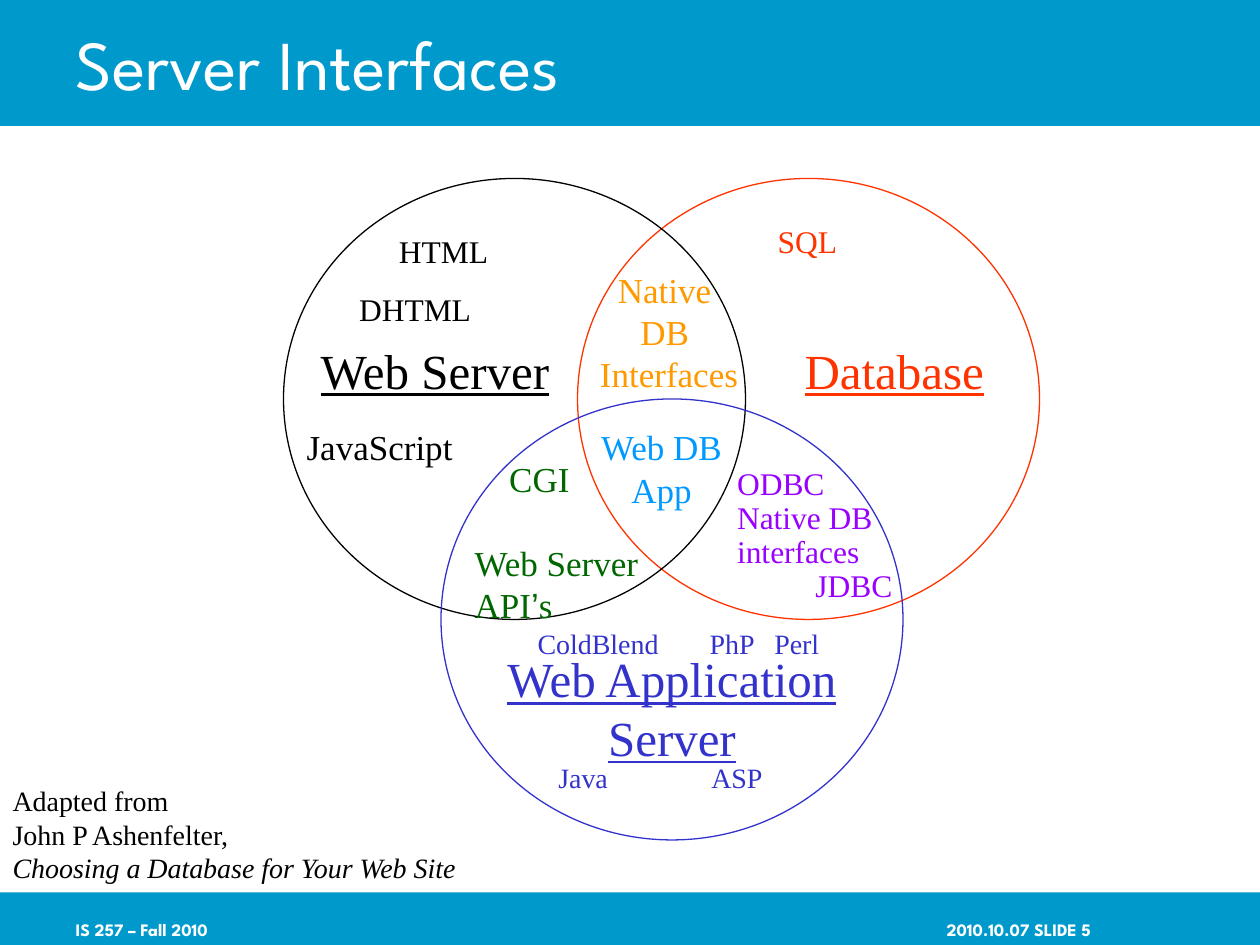
"""Build the Server Interfaces slide: three overlapping circles of web technologies."""
from pptx import Presentation
from pptx.dml.color import RGBColor
from pptx.enum import shapes, text
from pptx.util import Pt

SERIF, SANS = "Times New Roman", "League Spartan"
BLACK, WHITE, TEAL = "000000", "FFFFFF", "0099CC"
RED, BLUE, GREEN = "FF3300", "3333CC", "006600"
ORANGE, SKY, PURPLE = "FF9900", "0099FF", "9900FF"
LEFT, CENTER = text.PP_ALIGN.LEFT, text.PP_ALIGN.CENTER


def rgb(value):
    return RGBColor.from_string(value)


def label(lines, x, y, w, h, size, color, align=LEFT, name=SERIF, spacing=None,
          anchor=text.MSO_ANCHOR.TOP, **fmt):
    tf = s.shapes.add_textbox(Pt(x), Pt(y), Pt(w), Pt(h)).text_frame
    frame = dict(margin_left=0, margin_top=0, margin_right=0, margin_bottom=0,
                 word_wrap=False, vertical_anchor=anchor)
    for key, value in frame.items():
        setattr(tf, key, value)
    for i, line in enumerate(lines):
        p = tf.paragraphs[0] if i == 0 else tf.add_paragraph()
        p.alignment = align
        p.line_spacing = spacing
        for part in filter(None, line.partition("’")):
            r = p.add_run()
            r.text = part
            r.font.color.rgb = rgb(color)
            font = dict(fmt, size=Pt(size), name="Arial" if part == "’" else name)
            for key, value in font.items():
                setattr(r.font, key, value)
    return tf


prs = Presentation()
prs.slide_width, prs.slide_height = Pt(720), Pt(540)
s = prs.slides.add_slide(prs.slide_layouts[6])

for y, h in [(0, 72), (510, 30)]:
    sp = s.shapes.add_shape(shapes.MSO_SHAPE.RECTANGLE, 0, Pt(y), Pt(720), Pt(h))
    sp.shadow.inherit = False
    sp.fill.solid()
    sp.fill.fore_color.rgb = rgb(TEAL)
    sp.line.fill.background()

middle = text.MSO_ANCHOR.MIDDLE
label(["Server Interfaces"], 43.2, 0, 597.6, 72, 40, WHITE, name=SANS, anchor=middle)
for words, x in [("IS 257 – Fall 2010", 43.2), ("2010.10.07 SLIDE 5", 541)]:
    label([words], x, 521, 90, 20, 10, WHITE, name=SANS, anchor=middle, bold=True)

tf = label(["Adapted from", "John P Ashenfelter,", "Choosing a Database for Your Web Site"],
           7.2, 447.8, 257, 58, 16, BLACK)
tf.paragraphs[2].runs[0].font.italic = True

for x, y, color in [(330, 102, RED), (162, 102, BLACK), (252, 228, BLUE)]:
    sp = s.shapes.add_shape(shapes.MSO_SHAPE.OVAL, Pt(x), Pt(y), Pt(264), Pt(252))
    sp.shadow.inherit = False
    sp.fill.background()
    sp.line.color.rgb = rgb(color)
    sp.line.width = Pt(0.75)

for lines, x, y, w, color in [
    (["Database"], 456, 194.4, 110, RED),
    (["Web Server"], 178.5, 194.4, 140, BLACK),
    (["Web Application", "Server"], 284, 370.8, 200, BLUE),
]:
    label(lines, x, y, w, 33.6 * len(lines), 28, color, CENTER, underline=True)

for lines, x, y, w, size, color, align in [
    (["Web DB", "App"], 343, 243.4, 70, 20, SKY, CENTER),
    (["Native ", "DB ", "Interfaces"], 342.3, 153.4, 80, 20, ORANGE, CENTER),
    (["HTML"], 228, 132.5, 52, 18, BLACK, LEFT),
    (["DHTML"], 205.2, 165.6, 64, 18, BLACK, LEFT),
    (["JavaScript"], 175.2, 243.4, 84, 20, BLACK, LEFT),
    (["CGI"], 291, 261.4, 36, 20, GREEN, LEFT),
    (["Web Server", "API’s"], 271.2, 309.4, 100, 20, GREEN, LEFT),
    (["ColdBlend"], 307.2, 357.8, 76, 16, BLUE, LEFT),
    (["PhP"], 405.5, 357.8, 28, 16, BLUE, LEFT),
    (["Perl"], 442.5, 357.8, 28, 16, BLUE, LEFT),
    (["Java"], 319, 434.6, 32, 16, BLUE, LEFT),
    (["ASP"], 406.5, 434.6, 32, 16, BLUE, LEFT),
    (["SQL"], 444.3, 126.7, 34, 18, RED, LEFT),
]:
    label(lines, x, y, w, 1.2 * size * len(lines), size, color, align)

for lines, x, y in [(["ODBC", "Native DB", "interfaces"], 421.2, 267.8),
                    (["JDBC"], 466, 326.1)]:
    label(lines, x, y, 80, 19.44 * len(lines), 18, PURPLE, spacing=0.9)

prs.save("out.pptx")
